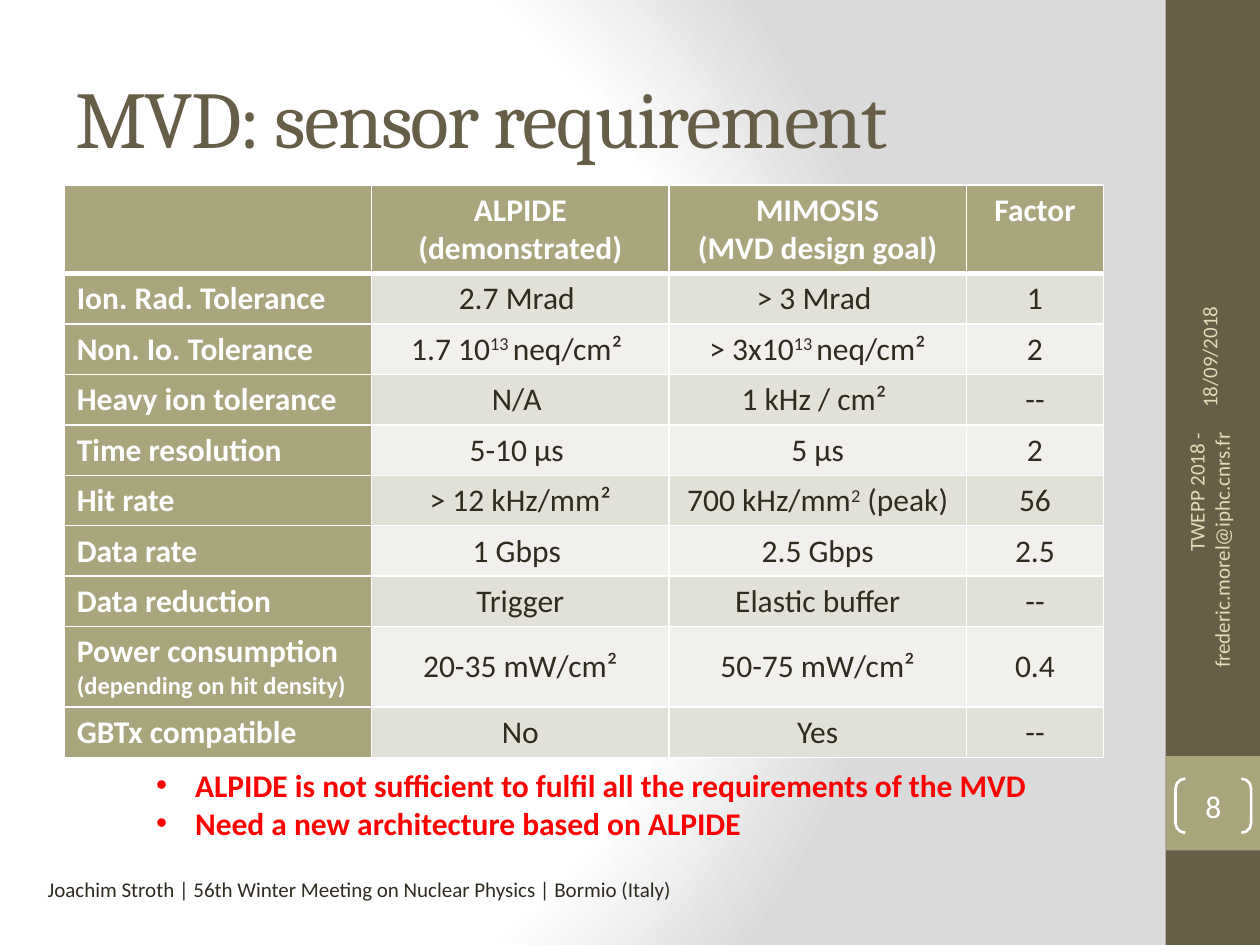
import pptx
import pptx.dml.color
import pptx.enum.shapes
import pptx.enum.text
import pptx.oxml
import pptx.oxml.ns
import pptx.util

Inches = pptx.util.Inches
Pt = pptx.util.Pt
qn = pptx.oxml.ns.qn
ALIGN = pptx.enum.text.PP_ALIGN
ANCHOR = pptx.enum.text.MSO_ANCHOR
SHAPE = pptx.enum.shapes.MSO_SHAPE

BROWN, OLIVE, SAND = "675E47", "A9A57C", "DFDCB7"
INK, WHITE, RED = "2F2B20", "FFFFFF", "FF0000"
BANDS = ("E2E1D7", "F1F0EC")

COLUMN_WIDTHS = (2.44, 2.36, 2.36, 1.09)
REQUIREMENTS = [
    ("", "ALPIDE\n(demonstrated)", "MIMOSIS\n(MVD design goal)", "Factor"),
    ("Ion. Rad. Tolerance", "2.7 Mrad ", "> 3 Mrad ", "1"),
    ("Non. Io. Tolerance", "1.7 10^13 ^neq/cm² ", "> 3x10^13 ^neq/cm²", "2"),
    ("Heavy ion tolerance", "N/A ", "1 kHz / cm² ", "--"),
    ("Time resolution", "5-10 μs ", "5 μs", "2"),
    ("Hit rate", "> 12 kHz/mm²", "700 kHz/mm^2^ (peak)", "56"),
    ("Data rate", "1 Gbps ", "2.5 Gbps", "2.5"),
    ("Data reduction", "Trigger", "Elastic buffer", "--"),
    ("Power consumption\n(depending on hit density)", "20-35 mW/cm²", "50-75 mW/cm²", "0.4"),
    ("GBTx compatible", "No", "Yes", "--"),
]


def rgb(hex_colour):
    """Turn a hex string into a colour."""
    return pptx.dml.color.RGBColor.from_string(hex_colour)


def drawing_xml(tag, attributes="", content=""):
    """Make one element of the drawing namespace."""
    namespace = pptx.oxml.ns.nsdecls("a")
    return pptx.oxml.parse_xml(f"<a:{tag} {namespace} {attributes}>{content}</a:{tag}>")


def write(frame, text, size=18, colour=INK, font="Calibri", bold=False,
          align=ALIGN.LEFT, anchor=ANCHOR.TOP, spacing=0, bullet=False, note_size=None):
    """Fill a text frame line by line, raising the parts set between carets."""
    frame.vertical_anchor = anchor
    for number, line in enumerate(text.split("\n")):
        paragraph = frame.paragraphs[0] if number == 0 else frame.add_paragraph()
        paragraph.alignment = align
        if bullet:
            properties = paragraph._p.get_or_add_pPr()
            properties.set("marL", str(Inches(0.31)))
            properties.set("indent", str(-Inches(0.31)))
            properties.append(drawing_xml("buFont", 'typeface="Arial"'))
            properties.append(drawing_xml("buChar", 'char="•"'))
        for part_number, part in enumerate(line.split("^")):
            run = paragraph.add_run()
            run.text = part
            run.font.size = Pt(note_size if note_size and number else size)
            run.font.name = font
            run.font.bold = bold
            run.font.color.rgb = rgb(colour)
            if part_number % 2:
                run._r.get_or_add_rPr().set("baseline", "30000")
            if spacing:
                run._r.get_or_add_rPr().set("spc", str(spacing * 100))


def add_text(slide, text, left, top, width, height, rotation=0, wrap=True, **text_format):
    """Add a text box."""
    box = slide.shapes.add_textbox(Inches(left), Inches(top), Inches(width), Inches(height))
    box.rotation = rotation
    box.text_frame.word_wrap = wrap
    write(box.text_frame, text, **text_format)


def add_panel(slide, top, height, colour):
    """Add a filled block of the right-hand sidebar."""
    panel = slide.shapes.add_shape(
        SHAPE.RECTANGLE, Inches(9.25), Inches(top), Inches(0.75), Inches(height))
    panel.shadow.inherit = False
    panel.fill.solid()
    panel.fill.fore_color.rgb = rgb(colour)
    panel.line.fill.background()


def add_page_number(slide, number):
    """Add the slide number between brackets."""
    brackets = slide.shapes.add_shape(
        SHAPE.DOUBLE_BRACKET, Inches(9.33), Inches(6.18), Inches(0.6), Inches(0.43))
    brackets.shadow.inherit = False
    brackets.adjustments[0] = 0.18
    brackets.fill.background()
    brackets.line.color.rgb = rgb(WHITE)
    brackets.line.width = Pt(1.5)
    frame = brackets.text_frame
    frame.margin_left = frame.margin_right = frame.margin_top = frame.margin_bottom = 0
    write(frame, number, colour=WHITE, align=ALIGN.CENTER, anchor=ANCHOR.MIDDLE)


def style_cell(cell, colour, top=1, bottom=1):
    """Give a cell its white borders and its fill."""
    for side, width in (("L", 1), ("R", 1), ("T", top), ("B", bottom)):
        cell._tc.get_or_add_tcPr().append(drawing_xml(
            "ln" + side, f'w="{Pt(width)}"',
            f'<a:solidFill><a:srgbClr val="{WHITE}"/></a:solidFill>'))
    cell.fill.solid()
    cell.fill.fore_color.rgb = rgb(colour)


def add_requirements(slide):
    """Add the table that compares both sensors."""
    table = slide.shapes.add_table(
        len(REQUIREMENTS), len(COLUMN_WIDTHS),
        Inches(0.51), Inches(1.47), Inches(8.25), Inches(4.53)).table
    for column, width in zip(table.columns, COLUMN_WIDTHS):
        column.width = Inches(width)
    for row, values in enumerate(REQUIREMENTS):
        two_lines = 0.7 if row == 0 else 0.64
        table.rows[row].height = Inches(two_lines if "\n" in "".join(values) else 0.4)
        for column, value in enumerate(values):
            cell = table.cell(row, column)
            heading = row == 0 or column == 0
            style_cell(cell, OLIVE if heading else BANDS[(row - 1) % 2],
                       top=3 if row == 1 else 1, bottom=3 if row == 0 else 1)
            middle = "\n" in values[0] and column > 0
            write(cell.text_frame, value, bold=heading,
                  colour=WHITE if heading else INK,
                  align=ALIGN.CENTER if column else ALIGN.LEFT,
                  note_size=None if column else 14)
            cell.vertical_anchor = ANCHOR.MIDDLE if middle else ANCHOR.TOP


def paint_background(slide):
    """Lay the round white to grey gradient behind the slide."""
    slide.background.fill.solid()
    background = slide.element.find(".//" + qn("p:bgPr"))
    stops = "".join(
        f'<a:gs pos="{place * 1000}"><a:srgbClr val="{colour}"/></a:gs>'
        for place, colour in ((0, WHITE), (75, WHITE), (100, "DADADA")))
    gradient = drawing_xml(
        "gradFill", 'rotWithShape="1"',
        f'<a:gsLst>{stops}</a:gsLst><a:path path="circle">'
        '<a:fillToRect l="20000" t="50000" r="100000" b="50000"/></a:path>')
    background.replace(background.find(qn("a:solidFill")), gradient)


def main():
    """Build the slide and save it."""
    deck = pptx.Presentation()
    deck.slide_width, deck.slide_height = Inches(10), Inches(7.5)
    slide = deck.slides.add_slide(deck.slide_layouts[6])
    paint_background(slide)
    add_panel(slide, 0, 7.5, BROWN)
    add_panel(slide, 6, 0.75, OLIVE)
    add_text(slide, "MVD: sensor requirement", 0.5, 0.3, 8.33, 1.25,
             size=46, font="Cambria", colour=BROWN, spacing=-1, anchor=ANCHOR.MIDDLE)
    add_requirements(slide)
    sidebar = dict(rotation=270, size=12, colour=SAND, anchor=ANCHOR.MIDDLE)
    add_text(slide, "18/09/2018", 8.26, 1.8, 2.67, 0.4, **sidebar)
    add_text(slide, "TWEPP 2018 - frederic.morel@iphc.cnrs.fr", 8.3, 4.43, 2.59, 0.4,
             align=ALIGN.RIGHT, **sidebar)
    add_page_number(slide, "8")
    add_text(slide, "Joachim Stroth | 56th Winter Meeting on Nuclear Physics | Bormio (Italy)",
             0.28, 6.91, 5.58, 0.3, wrap=False, size=12)
    add_text(slide, "ALPIDE is not sufficient to fulfil all the requirements of the MVD\n"
             "Need a new architecture based on ALPIDE",
             1.14, 6.03, 7.32, 0.71, colour=RED, bold=True, bullet=True)
    deck.save("out.pptx")


if __name__ == "__main__":
    main()
